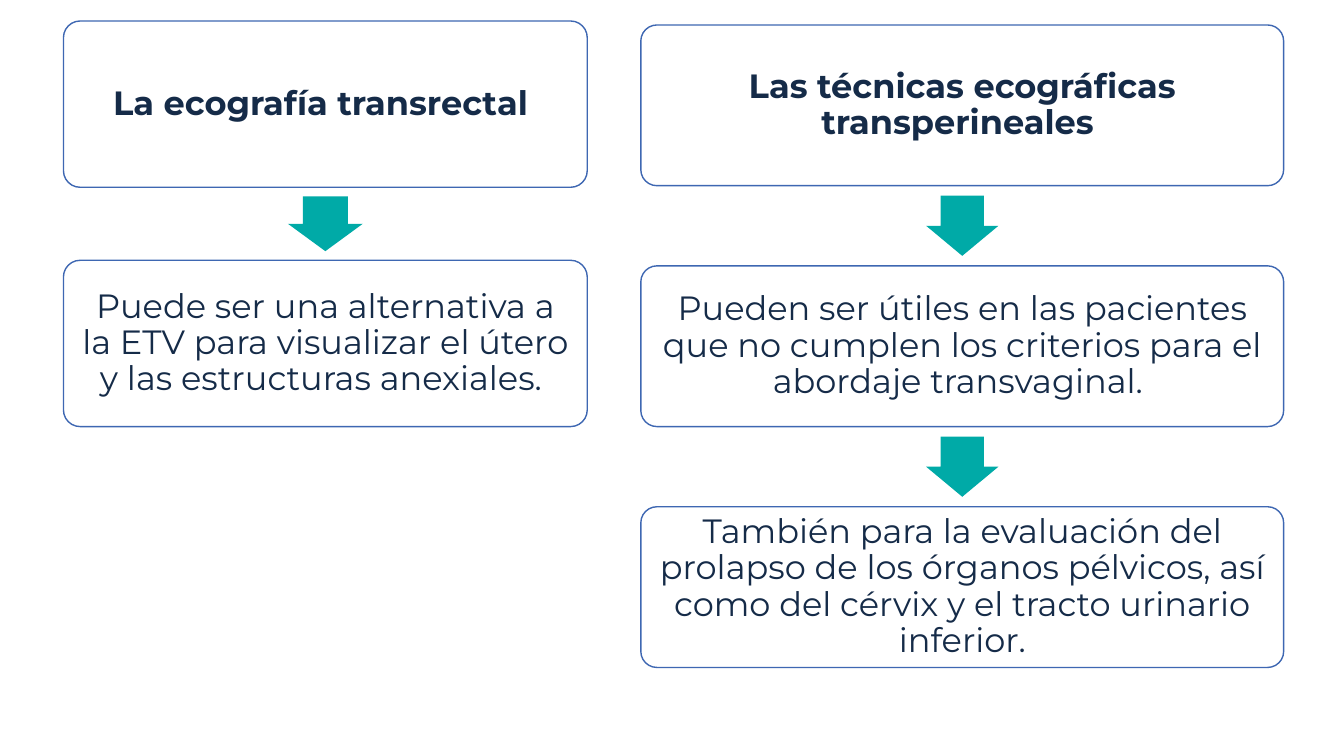
from pptx import Presentation
from pptx.dml.color import RGBColor
from pptx.enum.shapes import MSO_SHAPE
from pptx.enum.text import MSO_ANCHOR, PP_ALIGN
from pptx.util import Cm, Pt

WHITE = RGBColor(0xFF, 0xFF, 0xFF)
BLUE = RGBColor(0x3E, 0x67, 0xB2)
NAVY = RGBColor(0x15, 0x2B, 0x48)
TEAL = RGBColor(0x00, 0xAA, 0xA7)


class Flow:
    font = "Montserrat"
    size = Pt(24)
    inset = Cm(0.25)

    def __init__(self, slide):
        self.slide = slide

    def shape(self, kind, left, top, width, height, fill):
        item = self.slide.shapes.add_shape(
            kind, Cm(left), Cm(top), Cm(width), Cm(height))
        item.shadow.inherit = False
        item.fill.solid()
        item.fill.fore_color.rgb = fill
        return item

    def box(self, left, top, width, height, text, bold):
        item = self.shape(MSO_SHAPE.ROUNDED_RECTANGLE,
                          left, top, width, height, WHITE)
        item.adjustments[0] = 0.1
        item.line.color.rgb = BLUE
        item.line.width = Pt(1)
        frame = item.text_frame
        frame.word_wrap = True
        frame.vertical_anchor = MSO_ANCHOR.MIDDLE
        frame.margin_left = frame.margin_right = self.inset
        frame.margin_top = frame.margin_bottom = self.inset
        para = frame.paragraphs[0]
        para.alignment = PP_ALIGN.CENTER
        para.line_spacing = 0.9
        run = para.add_run()
        run.text = text
        run.font.name = self.font
        run.font.size = self.size
        run.font.bold = bold
        run.font.color.rgb = NAVY

    def arrow(self, mid, top, width, height):
        item = self.shape(MSO_SHAPE.DOWN_ARROW,
                          mid - width / 2, top, width, height, TEAL)
        item.adjustments[0] = 0.6
        item.adjustments[1] = 0.5
        item.line.fill.background()

    def column(self, left, top, width, height, step, texts):
        gap = step - height
        for i, text in enumerate(texts):
            y = top + i * step
            # The arrow fills the middle three quarters of the gap above
            if i:
                self.arrow(left + width / 2, y - gap * 7 / 8,
                           height * 0.45, gap * 0.75)
            self.box(left, y, width, height, text, bold=i == 0)


def main():
    deck = Presentation()
    deck.slide_width, deck.slide_height = Cm(33.87), Cm(19.05)
    flow = Flow(deck.slides.add_slide(deck.slide_layouts[6]))

    # Transperineal techniques
    flow.column(16.15, 0.63, 16.2, 4.05, 6.07, [
        "Las técnicas ecográficas transperineales ",
        "Pueden ser útiles en las pacientes que no cumplen los criterios "
        "para el abordaje transvaginal. ",
        "También para la evaluación del prolapso de los órganos pélvicos, "
        "así como del cérvix y el tracto urinario inferior.",
    ])

    # Transrectal ultrasound
    flow.column(1.6, 0.53, 13.2, 4.19, 6.03, [
        "La ecografía transrectal ",
        "Puede ser una alternativa a la ETV para visualizar el útero "
        "y las estructuras anexiales. ",
    ])

    deck.save("out.pptx")


if __name__ == "__main__":
    main()
